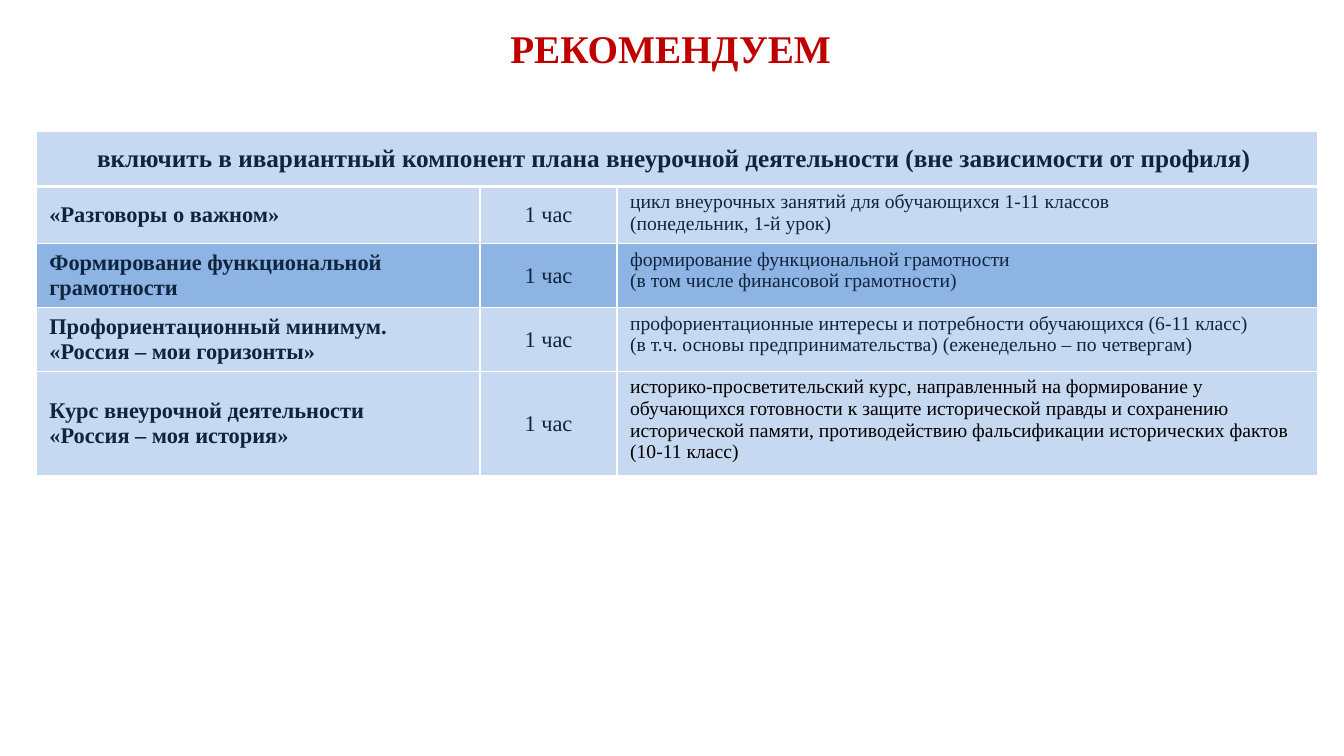
from lxml import etree
from pptx import Presentation
from pptx.dml.color import RGBColor
from pptx.enum.text import MSO_ANCHOR, PP_ALIGN
from pptx.oxml.ns import qn
from pptx.util import Inches, Pt

LEFT, CENTER = PP_ALIGN.LEFT, PP_ALIGN.CENTER
TOP, MIDDLE = MSO_ANCHOR.TOP, MSO_ANCHOR.MIDDLE
FONT = "Times New Roman"
COLORS = {
    "title": "C00000",
    "navy": "0F243E",
    "black": "000000",
    "light": "C6D9F1",
    "accent": "8EB4E3",
    "border": "FFFFFF",
}
TITLE = "РЕКОМЕНДУЕМ "
HEADER = "включить в ивариантный компонент плана внеурочной деятельности (вне зависимости от профиля) "
HOURS = "1 час"
# Course name, description, fill, description colour
COURSES = [
    ("«Разговоры о важном»",
     "цикл внеурочных занятий для обучающихся 1-11 классов\n(понедельник, 1-й урок)",
     "light", "navy"),
    ("Формирование функциональной грамотности",
     "формирование функциональной грамотности\n(в том числе финансовой грамотности)",
     "accent", "navy"),
    ("Профориентационный минимум.\n«Россия – мои горизонты»",
     "профориентационные интересы и потребности обучающихся (6-11 класс)\n"
     "(в т.ч. основы предпринимательства) (еженедельно – по четвергам)",
     "light", "navy"),
    ("Курс внеурочной деятельности\n«Россия – моя история»",
     "историко-просветительский курс, направленный на формирование у обучающихся "
     "готовности к защите исторической правды и сохранению исторической памяти, "
     "противодействию фальсификации исторических фактов (10-11 класс)",
     "light", "black"),
]
COLUMN_WIDTHS = [4.4, 1.36, 6.95]
ROW_HEIGHTS = [0.55, 0.55, 0.55, 0.55, 1.03]


def set_text(text_frame, text, size, color, bold=False, align=LEFT):
    text_frame.text = text
    text_frame.word_wrap = True
    for paragraph in text_frame.paragraphs:
        paragraph.alignment = align
        for run in paragraph.runs:
            run.font.name = FONT
            run.font.size = Pt(size)
            run.font.bold = bold
            run.font.color.rgb = RGBColor.from_string(COLORS[color])


def set_borders(cell, bottom=1, top=1):
    """Draw the cell borders; bottom and top widths are in points."""
    properties = cell._tc.get_or_add_tcPr()
    widths = {"a:lnL": 1, "a:lnR": 1, "a:lnT": top, "a:lnB": bottom}
    for index, (tag, width) in enumerate(widths.items()):
        line = etree.Element(qn(tag), w=str(Pt(width)))
        fill = etree.SubElement(line, qn("a:solidFill"))
        etree.SubElement(fill, qn("a:srgbClr"), val=COLORS["border"])
        properties.insert(index, line)


def fill_cell(cell, text, size, fill="light", color="navy", bold=False,
              align=LEFT, anchor=MIDDLE):
    set_text(cell.text_frame, text, size, color, bold, align)
    cell.vertical_anchor = anchor
    cell.margin_left = cell.margin_right = Inches(0.13)
    cell.margin_top = cell.margin_bottom = Inches(0.05)
    cell.fill.solid()
    cell.fill.fore_color.rgb = RGBColor.from_string(COLORS[fill])


def add_title(slide):
    box = slide.shapes.add_textbox(Inches(0.23), Inches(0.08), Inches(12.94), Inches(0.79))
    set_text(box.text_frame, TITLE, 28, "title", bold=True, align=CENTER)
    box.text_frame.vertical_anchor = MIDDLE


def add_course_table(slide):
    table = slide.shapes.add_table(
        len(ROW_HEIGHTS), len(COLUMN_WIDTHS), Inches(0.36), Inches(1.3),
        Inches(sum(COLUMN_WIDTHS)), Inches(sum(ROW_HEIGHTS))).table
    for column, width in zip(table.columns, COLUMN_WIDTHS):
        column.width = Inches(width)
    for row, height in zip(table.rows, ROW_HEIGHTS):
        row.height = Inches(height)

    table.cell(0, 0).merge(table.cell(0, len(COLUMN_WIDTHS) - 1))
    fill_cell(table.cell(0, 0), HEADER, 18, bold=True, align=CENTER)
    for row, (name, description, fill, color) in enumerate(COURSES, start=1):
        fill_cell(table.cell(row, 0), name, 16, fill, bold=True)
        fill_cell(table.cell(row, 1), HOURS, 16, fill, align=CENTER)
        fill_cell(table.cell(row, 2), description, 14, fill, color, anchor=TOP)
    for row in range(len(ROW_HEIGHTS)):
        for column in range(len(COLUMN_WIDTHS)):
            set_borders(table.cell(row, column), bottom=3 if row == 0 else 1,
                        top=3 if row == 1 else 1)


def main():
    presentation = Presentation()
    presentation.slide_width = Inches(13.33)
    presentation.slide_height = Inches(7.5)
    slide = presentation.slides.add_slide(presentation.slide_layouts[6])
    add_title(slide)
    add_course_table(slide)
    presentation.save("out.pptx")


if __name__ == "__main__":
    main()
